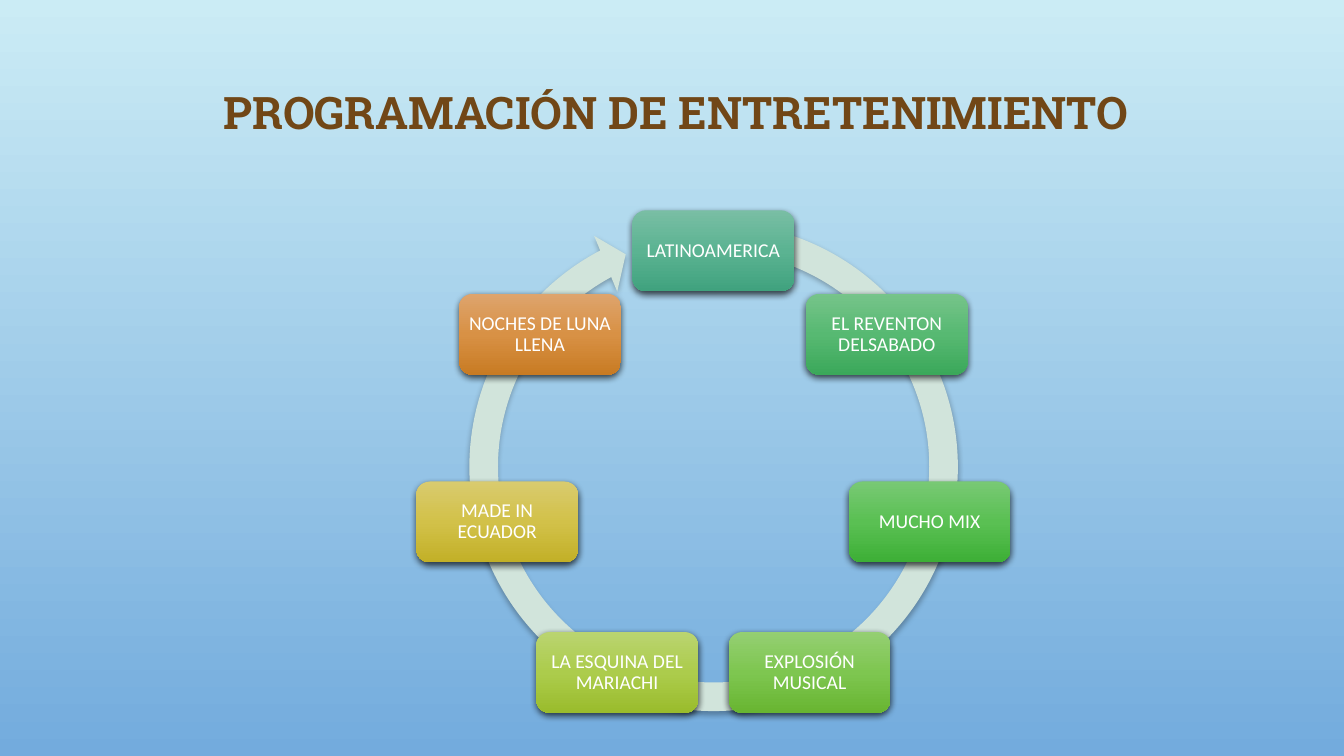
import copy
import math
from lxml import etree
from pptx import Presentation
from pptx import util as u
from pptx.dml.color import RGBColor
from pptx.enum import shapes, text
from pptx.oxml.ns import qn

SKY_TOP = RGBColor(0xCB, 0xEC, 0xF5)
SKY_BOTTOM = RGBColor(0x73, 0xAB, 0xDD)
BROWN = RGBColor(0x71, 0x47, 0x17)
PALE_GREEN = RGBColor(0xD1, 0xE4, 0xDB)
WHITE = RGBColor(0xFF, 0xFF, 0xFF)
TEAL = (RGBColor(0x79, 0xBE, 0xA4), RGBColor(0x5B, 0xB3, 0x92), RGBColor(0x40, 0xA2, 0x7E))
EMERALD = (RGBColor(0x76, 0xC4, 0x8A), RGBColor(0x57, 0xB9, 0x72), RGBColor(0x3B, 0xA8, 0x5A))
GREEN = (RGBColor(0x78, 0xC9, 0x74), RGBColor(0x5A, 0xC0, 0x53), RGBColor(0x3D, 0xAF, 0x36))
LEAF = (RGBColor(0x94, 0xCF, 0x72), RGBColor(0x7E, 0xC6, 0x50), RGBColor(0x68, 0xB5, 0x31))
LIME = (RGBColor(0xBA, 0xD4, 0x70), RGBColor(0xAC, 0xCC, 0x4C), RGBColor(0x9A, 0xBC, 0x2C))
MUSTARD = (RGBColor(0xD9, 0xCB, 0x6E), RGBColor(0xD2, 0xC1, 0x49), RGBColor(0xC2, 0xB0, 0x27))
ORANGE = (RGBColor(0xDE, 0xA4, 0x6D), RGBColor(0xD8, 0x91, 0x45), RGBColor(0xC8, 0x7B, 0x23))

PROGRAMMES = [
    ("LATINOAMERICA", TEAL),
    ("EL REVENTON DELSABADO", EMERALD),
    ("MUCHO MIX", GREEN),
    ("EXPLOSIÓN MUSICAL", LEAF),
    ("LA ESQUINA DEL MARIACHI", LIME),
    ("MADE IN ECUADOR", MUSTARD),
    ("NOCHES DE LUNA LLENA", ORANGE),
]


def apply(target, values):
    for key, value in values.items():
        setattr(target, key, value)


class CycleSlide:
    title_font = {"name": "Roboto Slab", "size": u.Pt(32), "bold": True}
    card_font = {"name": "Calibri", "size": u.Pt(14), "bold": False}
    title_frame = {"word_wrap": False, "auto_size": text.MSO_AUTO_SIZE.SHAPE_TO_FIT_TEXT}
    card_frame = {
        "word_wrap": True,
        "vertical_anchor": text.MSO_ANCHOR.MIDDLE,
        "margin_left": u.Cm(0.15),
        "margin_right": u.Cm(0.15),
        "margin_top": u.Cm(0.15),
        "margin_bottom": u.Cm(0.15),
    }
    card_width, card_height = 4.08, 2.04

    def __init__(self, deck):
        self.slide = deck.slides.add_slide(deck.slide_layouts[6])

    def gradient(self, fill, owner, colours):
        fill.gradient()
        fill.gradient_angle = 270
        stops = owner.xpath(".//a:gsLst")[0]
        for _ in colours[2:]:
            stops.insert(1, copy.deepcopy(stops[0]))
        for index, (stop, colour) in enumerate(zip(fill.gradient_stops, colours)):
            stop.position = index / (len(colours) - 1)
            stop.color.rgb = colour

    def background(self, colours):
        self.gradient(self.slide.background.fill, self.slide.element, colours)

    def label(self, frame, words, frame_format, font_format, colour):
        apply(frame, frame_format)
        paragraph = frame.paragraphs[0]
        paragraph.text = words
        paragraph.alignment = text.PP_ALIGN.CENTER
        apply(paragraph.font, font_format)
        paragraph.font.color.rgb = colour
        return paragraph

    def title(self, words, left, top, width, height):
        box = self.slide.shapes.add_textbox(u.Cm(left), u.Cm(top), u.Cm(width), u.Cm(height))
        self.label(box.text_frame, words, self.title_frame, self.title_font, BROWN)

    def preset(self, kind, left, top, width, height, blur, opacity):
        shape = self.slide.shapes.add_shape(
            kind, u.Cm(left), u.Cm(top), u.Cm(width), u.Cm(height))
        shape.line.fill.background()
        shape.shadow.inherit = False
        effects = shape.element.spPr.find(qn("a:effectLst"))
        shadow = etree.SubElement(
            effects, qn("a:outerShdw"), blurRad=str(u.Pt(blur)), dist=str(u.Pt(2)),
            dir="5400000", algn="ctr", rotWithShape="0")
        black = etree.SubElement(shadow, qn("a:srgbClr"), val="000000")
        etree.SubElement(black, qn("a:alpha"), val=str(opacity * 1000))
        return shape

    def ring(self, left, top, size):
        arrow = self.preset(
            shapes.MSO_SHAPE.CIRCULAR_ARROW, left, top, size, size, blur=4, opacity=28)
        for index, value in enumerate((0.055, 3.307, 145.208, 169.473, 0.058)):
            arrow.adjustments[index] = value
        arrow.fill.solid()
        arrow.fill.fore_color.rgb = PALE_GREEN

    def card(self, words, colours, centre_x, centre_y):
        card = self.preset(
            shapes.MSO_SHAPE.ROUNDED_RECTANGLE,
            centre_x - self.card_width / 2, centre_y - self.card_height / 2,
            self.card_width, self.card_height, blur=5, opacity=69)
        self.gradient(card.fill, card.element, colours)
        name = self.label(card.text_frame, words, self.card_frame, self.card_font, WHITE)
        name.line_spacing = 0.9

    def cycle(self, programmes, centre_x, centre_y, radius):
        for index, (words, colours) in enumerate(programmes):
            angle = 2 * math.pi * index / len(programmes)
            self.card(words, colours, centre_x + radius * math.sin(angle),
                      centre_y - radius * math.cos(angle))


def main():
    deck = Presentation()
    apply(deck, {"slide_width": u.Cm(33.87), "slide_height": u.Cm(19.05)})
    page = CycleSlide(deck)
    page.background((SKY_TOP, SKY_BOTTOM))
    page.title("PROGRAMACIÓN DE ENTRETENIMIENTO", 4.11, 2, 25.86, 1.63)
    page.ring(11.43, 5.21, 13.11)
    page.cycle(PROGRAMMES, 17.98, 11.91, 5.59)
    deck.save("out.pptx")


if __name__ == "__main__":
    main()
